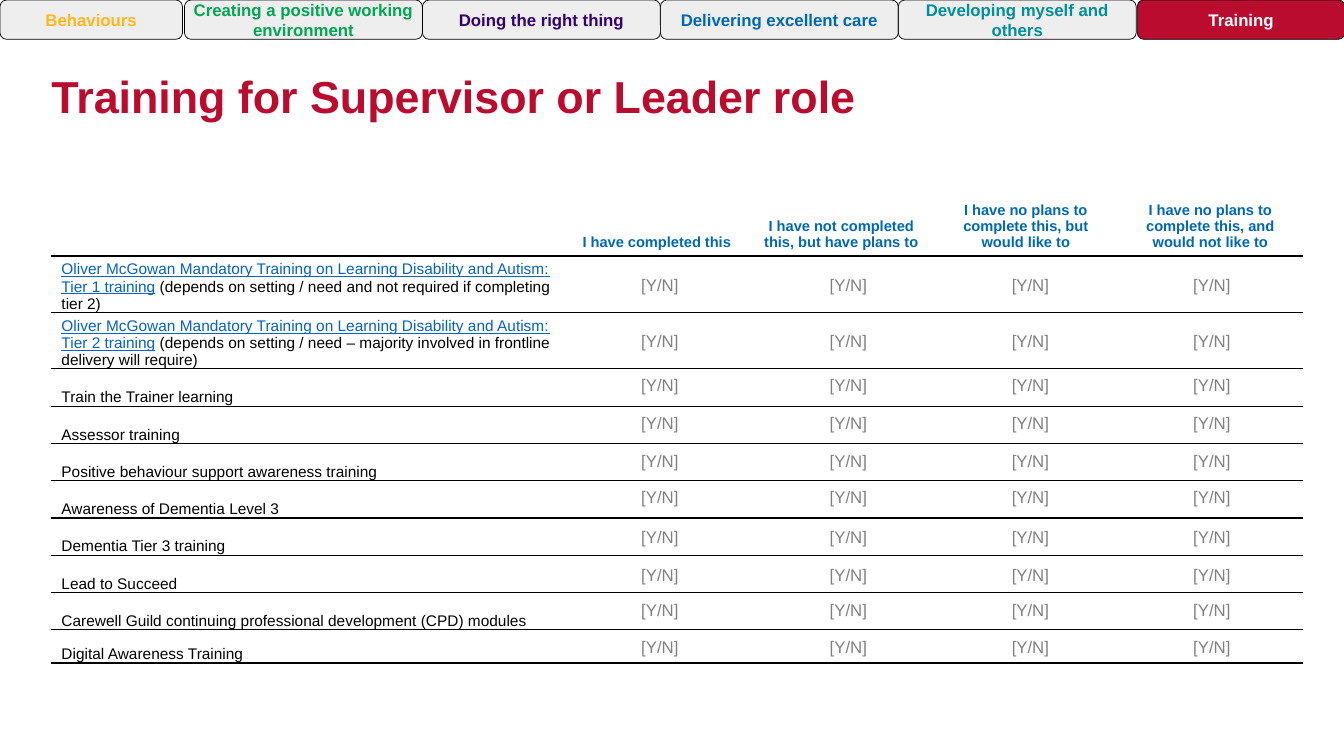
from dataclasses import dataclass

import lxml.etree
import pptx
import pptx.dml.color
import pptx.enum.shapes
import pptx.enum.text
import pptx.oxml.ns
import pptx.slide
import pptx.table
import pptx.text.text
import pptx.util

Inches = pptx.util.Inches
RGBColor = pptx.dml.color.RGBColor
Align = pptx.enum.text.PP_ALIGN
Anchor = pptx.enum.text.MSO_ANCHOR
AutoSize = pptx.enum.text.MSO_AUTO_SIZE
qn = pptx.oxml.ns.qn

FONT = "Arial"
BLACK = RGBColor(0x00, 0x00, 0x00)
WHITE = RGBColor(0xFF, 0xFF, 0xFF)
CRIMSON = RGBColor(0xBA, 0x0C, 0x2F)
AMBER = RGBColor(0xFF, 0xB8, 0x1C)
GREEN = RGBColor(0x00, 0xA6, 0x51)
PURPLE = RGBColor(0x33, 0x00, 0x72)
BLUE = RGBColor(0x00, 0x68, 0xB3)
TEAL = RGBColor(0x00, 0x8F, 0x9C)
LINK_BLUE = RGBColor(0x05, 0x63, 0xC1)
TAB_GREY = RGBColor(0xCA, 0xCA, 0xCA)
ANSWER_GREY = RGBColor(0x80, 0x80, 0x80)
PLAIN_STYLE = "{2D5ABB26-0587-4C30-8999-92F81FD0307C}"


@dataclass(frozen=True)
class Tab:
    label: str
    color: RGBColor
    left: float
    width: float
    active: bool = False


@dataclass(frozen=True)
class Course:
    name: str
    answer_top: float
    height: float = 0.37
    linked: str = ""


@dataclass(frozen=True)
class AnswerColumn:
    heading: str
    left: float
    width: float


MIDDLE_LEFT, MIDDLE_WIDTH = 1.83, 2.36
MIDDLE_TABS = [
    ("Creating a positive working environment", GREEN),
    ("Doing the right thing", PURPLE),
    ("Delivering excellent care", BLUE),
    ("Developing myself and others", TEAL),
]
TABS = [
    Tab("Behaviours", AMBER, 0, 1.81),
    *(Tab(label, color, MIDDLE_LEFT + i * MIDDLE_WIDTH, MIDDLE_WIDTH)
      for i, (label, color) in enumerate(MIDDLE_TABS)),
    Tab("Training", WHITE, 11.28, 2.06, active=True),
]
OLIVER = "Oliver McGowan Mandatory Training on Learning Disability and Autism: "
COURSES = [
    Course(" (depends on setting / need and not required if completing tier 2)",
           2.68, 0.56, OLIVER + "Tier 1 training"),
    Course(" (depends on setting / need – majority involved in frontline delivery will require)",
           3.23, 0.56, OLIVER + "Tier 2 training"),
    Course("Train the Trainer learning", 3.67),
    Course("Assessor training", 4.05),
    Course("Positive behaviour support awareness training", 4.42),
    Course("Awareness of Dementia Level 3", 4.78),
    Course("Dementia Tier 3 training", 5.18),
    Course("Lead to Succeed", 5.55),
    Course("Carewell Guild continuing professional development (CPD) modules", 5.9),
    Course("Digital Awareness Training", 6.27, 0.33),
]
ANSWERS = [
    AnswerColumn("I have completed this", 5.67, 1.75),
    AnswerColumn("I have not completed this, but have plans to", 7.5, 1.83),
    AnswerColumn("I have no plans to complete this, but would like to", 9.42, 1.6),
    AnswerColumn("I have no plans to complete this, and would not like to", 11.22, 1.6),
]


def add_run(frame: pptx.text.text.TextFrame, text: str, size: float, color: RGBColor,
            bold: bool = False, underline: bool = False,
            align: Align = Align.LEFT) -> None:
    paragraph = frame.paragraphs[0]
    paragraph.alignment = align
    run = paragraph.add_run()
    run.text = text
    run.font.name = FONT
    run.font.size = pptx.util.Pt(size)
    run.font.bold = bold
    run.font.underline = underline
    run.font.color.rgb = color


def add_tab(slide: pptx.slide.Slide, tab: Tab) -> None:
    button = slide.shapes.add_shape(
        pptx.enum.shapes.MSO_SHAPE.ROUNDED_RECTANGLE,
        Inches(tab.left), 0, Inches(tab.width), Inches(0.39))
    button.shadow.inherit = False
    button.fill.solid()
    button.fill.fore_color.rgb = CRIMSON if tab.active else TAB_GREY
    if not tab.active:
        tint = button.fill._xPr.find(qn("a:solidFill"))[0]
        lxml.etree.SubElement(tint, qn("a:alpha"), val="30000")
    button.line.color.rgb = BLACK
    button.line.width = pptx.util.Pt(0.5)
    frame = button.text_frame
    frame.word_wrap = True
    frame.vertical_anchor = Anchor.MIDDLE
    frame.margin_left = frame.margin_right = 0
    frame.margin_top = frame.margin_bottom = Inches(0.05)
    add_run(frame, tab.label, 12, tab.color, bold=True, align=Align.CENTER)


def add_title(slide: pptx.slide.Slide, text: str) -> None:
    title = slide.shapes.title
    title.left, title.top = Inches(0.41), Inches(0.58)
    title.width, title.height = Inches(8.3), Inches(0.69)
    frame = title.text_frame
    frame.word_wrap = False
    frame.auto_size = AutoSize.NONE
    frame.vertical_anchor = Anchor.TOP
    frame.margin_left = frame.margin_right = Inches(0.1)
    frame.margin_top = frame.margin_bottom = Inches(0.1)
    add_run(frame, text, 32, CRIMSON, bold=True)


def rule_cell(cell: pptx.table._Cell, sides: list[str]) -> None:
    """Draw a thin black rule on the given sides of a cell."""
    properties = cell._tc.get_or_add_tcPr()
    for position, side in enumerate(sides):
        rule = lxml.etree.Element(qn(f"a:ln{side}"), w="12700")
        fill = lxml.etree.SubElement(rule, qn("a:solidFill"))
        lxml.etree.SubElement(fill, qn("a:srgbClr"), val=str(BLACK))
        properties.insert(position, rule)


def set_margins(cell: pptx.table._Cell, left: float, top: float,
                right: float, bottom: float) -> None:
    cell.vertical_anchor = Anchor.BOTTOM
    cell.margin_left, cell.margin_top = Inches(left), Inches(top)
    cell.margin_right, cell.margin_bottom = Inches(right), Inches(bottom)


def add_training_table(slide: pptx.slide.Slide) -> None:
    widths = [5.09] + [1.83] * len(ANSWERS)
    heights = [0.64] + [course.height for course in COURSES]
    holder = slide.shapes.add_table(
        len(heights), len(widths), Inches(0.51), Inches(1.9),
        Inches(sum(widths)), Inches(sum(heights)))
    table = holder.table
    table.first_row = table.horz_banding = False
    table._tbl.tblPr.find(qn("a:tableStyleId")).text = PLAIN_STYLE
    for column, width in zip(table.columns, widths):
        column.width = Inches(width)
    for index, (row, height) in enumerate(zip(table.rows, heights)):
        row.height = Inches(height)
        for cell in row.cells:
            if index == 0:
                cell.fill.solid()
                cell.fill.fore_color.rgb = WHITE
                set_margins(cell, 0.11, 0.05, 0.11, 0.05)
            else:
                cell.fill.background()
                set_margins(cell, 0.1, 0.01, 0.01, 0)
            rule_cell(cell, ["T", "B"] if index else ["B"])
    for index, answer in enumerate(ANSWERS, 1):
        add_run(table.cell(0, index).text_frame, answer.heading, 10.5, BLUE,
                bold=True, align=Align.CENTER)
    for index, course in enumerate(COURSES, 1):
        frame = table.cell(index, 0).text_frame
        if course.linked:
            add_run(frame, course.linked, 11, LINK_BLUE, underline=True)
        add_run(frame, course.name, 11, BLACK)


def add_answer(slide: pptx.slide.Slide, answer: AnswerColumn, top: float) -> None:
    field = slide.shapes.add_textbox(
        Inches(answer.left), Inches(top), Inches(answer.width), Inches(0.3))
    field.text_frame.word_wrap = True
    field.text_frame.auto_size = AutoSize.SHAPE_TO_FIT_TEXT
    add_run(field.text_frame, "[Y/N]", 12, ANSWER_GREY, align=Align.CENTER)


def main() -> None:
    deck = pptx.Presentation()
    deck.slide_width, deck.slide_height = Inches(13.33), Inches(7.5)
    slide = deck.slides.add_slide(deck.slide_layouts.get_by_name("Title Only"))
    for tab in TABS:
        add_tab(slide, tab)
    add_title(slide, "Training for Supervisor or Leader role")
    add_training_table(slide)
    for course in COURSES:
        for answer in ANSWERS:
            add_answer(slide, answer, course.answer_top)
    deck.save("out.pptx")


if __name__ == "__main__":
    main()
